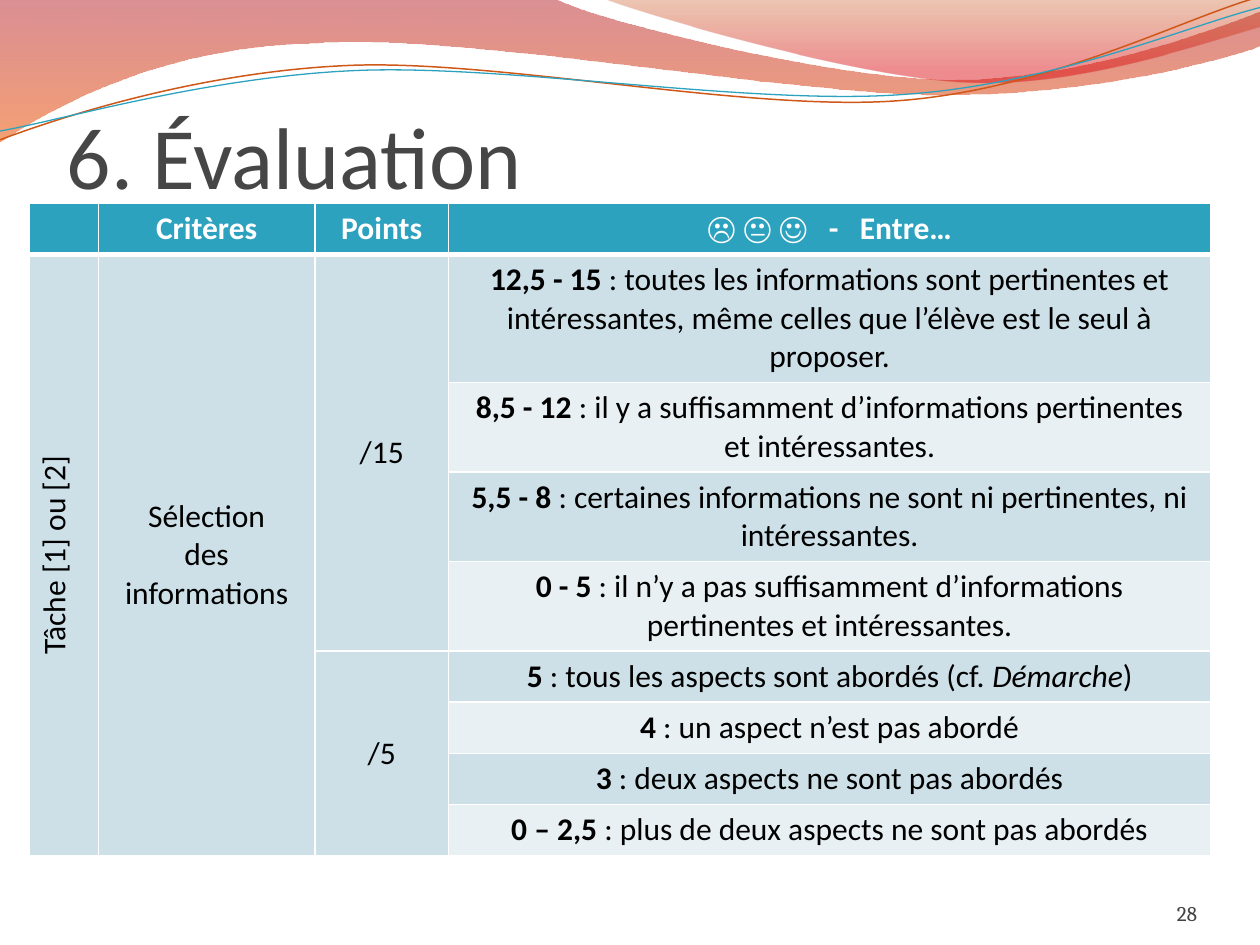
from lxml.etree import SubElement
from pptx import Presentation
from pptx.dml.color import RGBColor
from pptx.enum.text import MSO_ANCHOR, PP_ALIGN
from pptx.oxml.ns import qn
from pptx.util import Inches, Pt

COLORS = {
    "title": "464646", "number": "434343", "header": "2DA2BF",
    "band_dark": "CDE0E8", "band_light": "E8F0F4", "white": "FFFFFF",
    "black": "000000", "orange_line": "CF5818", "blue_line": "2DA2BF",
    "crimson": "AF0911", "orange": "EE5300", "rust": "C24400", "red": "DC000B",
}
FONT = "Calibri"

COLUMN_WIDTHS = [0.55, 1.72, 1.06, 6.05]
ROW_HEIGHTS = [0.41, 1, 0.7, 0.7, 0.7, 0.4, 0.4, 0.4, 0.4]
HEADINGS = ["", "Critères", "Points", "☹ 😐 ☺   -   Entre…"]
# first row, last row, column, text
MERGED_CELLS = [
    (1, 8, 0, "Tâche [1] ou [2]"),
    (1, 8, 1, "Sélection\vdes\vinformations"),
    (1, 4, 2, "/15"),
    (5, 8, 2, "/5"),
]
# score in bold, description, words in italics, ending
LEVELS = [
    ("12,5 - 15", " : toutes les informations sont pertinentes et intéressantes, "
     "même celles que l’élève est le seul à proposer."),
    ("8,5 - 12 ", ": il y a suffisamment d’informations pertinentes et intéressantes."),
    ("5,5 - 8", " : certaines informations ne sont ni pertinentes, ni intéressantes."),
    ("0 - 5", " : il n’y a pas suffisamment d’informations pertinentes et intéressantes."),
    ("5", " : tous les aspects sont abordés (cf. ", "Démarche", ")"),
    ("4", " : un aspect n’est pas abordé"),
    ("3", " : deux aspects ne sont pas abordés"),
    ("0 – 2,5", " : plus de deux aspects ne sont pas abordés"),
]

# Each segment is an end point (line) or two handles and an end point (curve).
LARGE_WAVE = [
    (0, 0), (4.4, -0.01),
    (4.76, 0.17, 6.64, 0.63, 7.58, 0.63), (8.53, 0.63, 9.58, 0.26, 10, 0.09),
    (10.01, 0.36),
    (9.83, 0.44, 8.7, 0.76, 7.46, 0.75), (6.22, 0.75, 3.82, 0.28, 2.57, 0.34),
    (1.29, 0.36, 0.46, 0.83, -0.01, 1.13), (0, 0),
]
SMALL_WAVE = [
    (4.79, -0.01),
    (5.09, 0.11, 6.82, 0.62, 7.69, 0.65), (8.56, 0.69, 9.61, 0.32, 10, 0.21),
    (10, 0), (4.79, -0.01),
]
ORANGE_CURVE = [
    (0, 1.11), (0.48, 0.93, 1.58, 0.57, 2.77, 0.52),
    (3.95, 0.47, 5.93, 0.89, 7.13, 0.8), (8.33, 0.71, 9.38, 0.15, 9.98, -0.02),
]
BLUE_CURVE = [
    (0, 1.04), (0.47, 0.96, 1.64, 0.61, 2.83, 0.56),
    (4.03, 0.51, 5.97, 0.84, 7.17, 0.75), (8.36, 0.67, 9.41, 0.21, 10, 0.06),
]


def color(name):
    return RGBColor.from_string(COLORS[name])


def add_outline(page, segments, closed):
    """Draw every point as a line, then join each handle pair and end into a curve."""
    points = [(Inches(x), Inches(y))
              for segment in segments
              for x, y in zip(segment[::2], segment[1::2])]
    builder = page.shapes.build_freeform(*points[0])
    builder.add_line_segments(points[1:], close=closed)
    shape = builder.convert_to_shape()
    shape.shadow.inherit = False
    lines = iter(list(shape._element.iter(qn("a:lnTo"))))
    for segment in segments[1:]:
        first = next(lines)
        if len(segment) == 6:
            first.tag = qn("a:cubicBezTo")
            for line in (next(lines), next(lines)):
                first.append(line[0])
                line.getparent().remove(line)
    return shape


def add_wave(page, segments, stops):
    """Stops are (position, colour, opacity in percent), from top to bottom."""
    shape = add_outline(page, segments, True)
    shape.line.fill.background()
    shape.fill.gradient()
    shape.fill.gradient_angle = 270
    for stop, (position, name, _) in zip(shape.fill.gradient_stops, stops):
        stop.position = position
        stop.color.rgb = color(name)
    for element, (_, _, opacity) in zip(shape._element.iter(qn("a:srgbClr")), stops):
        SubElement(element, qn("a:alpha"), val=str(opacity * 1000))


def add_curve(page, segments, name, width):
    shape = add_outline(page, segments, False)
    shape.fill.background()
    shape.line.color.rgb = color(name)
    shape.line.width = Pt(width)


def format_span(span, size, name, font=FONT, bold=False, italic=False):
    span.font.name = font
    span.font.size = Pt(size)
    span.font.color.rgb = color(name)
    span.font.bold = bold
    span.font.italic = italic


def add_title(page, text):
    title = page.shapes.title
    title.left, title.top = Inches(0.53), Inches(0.39)
    title.width, title.height = Inches(9), Inches(1.25)
    frame = title.text_frame
    frame.text = text
    frame.margin_left = frame.margin_right = frame.margin_bottom = 0
    frame.vertical_anchor = MSO_ANCHOR.BOTTOM
    frame.paragraphs[0].alignment = PP_ALIGN.LEFT
    format_span(frame.paragraphs[0].runs[0], 50, "title")
    page.shapes._spTree.append(title._element)  # in front of the waves


def add_page_number(page, text):
    box = page.shapes.add_textbox(Inches(8.67), Inches(6.95), Inches(0.83), Inches(0.4))
    frame = box.text_frame
    frame.word_wrap = True
    frame.margin_left = frame.margin_right = frame.margin_top = frame.margin_bottom = 0
    frame.vertical_anchor = MSO_ANCHOR.BOTTOM
    frame.text = text
    frame.paragraphs[0].alignment = PP_ALIGN.RIGHT
    format_span(frame.paragraphs[0].runs[0], 12, "number", "Cambria")


def style_cell(cell, fill, bottom=1):
    properties = cell._tc.get_or_add_tcPr()
    for side, width in (("L", 1), ("R", 1), ("T", 1), ("B", bottom)):
        border = SubElement(properties, qn(f"a:ln{side}"), w=str(Pt(width)))
        solid = SubElement(border, qn("a:solidFill"))
        SubElement(solid, qn("a:srgbClr"), val=COLORS["white"])
    cell.fill.solid()
    cell.fill.fore_color.rgb = color(fill)


def write_cell(cell, parts, name="black", bold_first=False):
    """Write the parts as runs; a third part is in italics."""
    para = cell.text_frame.paragraphs[0]
    para.alignment = PP_ALIGN.CENTER
    para.text = parts[0]
    for part in parts[1:]:
        para.add_run().text = part
    for index, span in enumerate(para.runs):
        format_span(span, 18, name, bold=bold_first and index == 0,
                    italic=index == 2 and len(parts) > 2)


def add_rubric(page):
    frame = page.shapes.add_table(len(ROW_HEIGHTS), len(COLUMN_WIDTHS), Inches(0.23), Inches(1.61),
                                  Inches(sum(COLUMN_WIDTHS)), Inches(sum(ROW_HEIGHTS)))
    table = frame.table
    for column, width in zip(table.columns, COLUMN_WIDTHS):
        column.width = Inches(width)
    for row, height in zip(table.rows, ROW_HEIGHTS):
        row.height = Inches(height)

    for index, heading in enumerate(HEADINGS):
        style_cell(table.cell(0, index), "header", bottom=3)
        if heading:
            write_cell(table.cell(0, index), [heading], "white", bold_first=True)
    for row, level in enumerate(LEVELS, start=1):
        for column in range(3):
            style_cell(table.cell(row, column), "band_dark")
        style_cell(table.cell(row, 3), "band_dark" if row % 2 else "band_light")
        write_cell(table.cell(row, 3), level, bold_first=True)
    for first, last, column, text in MERGED_CELLS:
        cell = table.cell(first, column)
        cell.merge(table.cell(last, column))
        cell.vertical_anchor = MSO_ANCHOR.MIDDLE
        write_cell(cell, [text])
    table.cell(1, 0)._tc.get_or_add_tcPr().set("vert", "vert270")


def main():
    deck = Presentation()
    deck.slide_width, deck.slide_height = Inches(10), Inches(7.5)
    page = deck.slides.add_slide(deck.slide_layouts[5])
    add_wave(page, LARGE_WAVE, [(0, "crimson", 45), (1, "orange", 55)])
    add_wave(page, SMALL_WAVE, [(0, "rust", 30), (0.8, "red", 45)])
    add_curve(page, ORANGE_CURVE, "orange_line", 0.85)
    add_curve(page, BLUE_CURVE, "blue_line", 0.75)
    add_title(page, "6. Évaluation")
    add_rubric(page)
    add_page_number(page, "28")
    deck.save("out.pptx")


if __name__ == "__main__":
    main()
